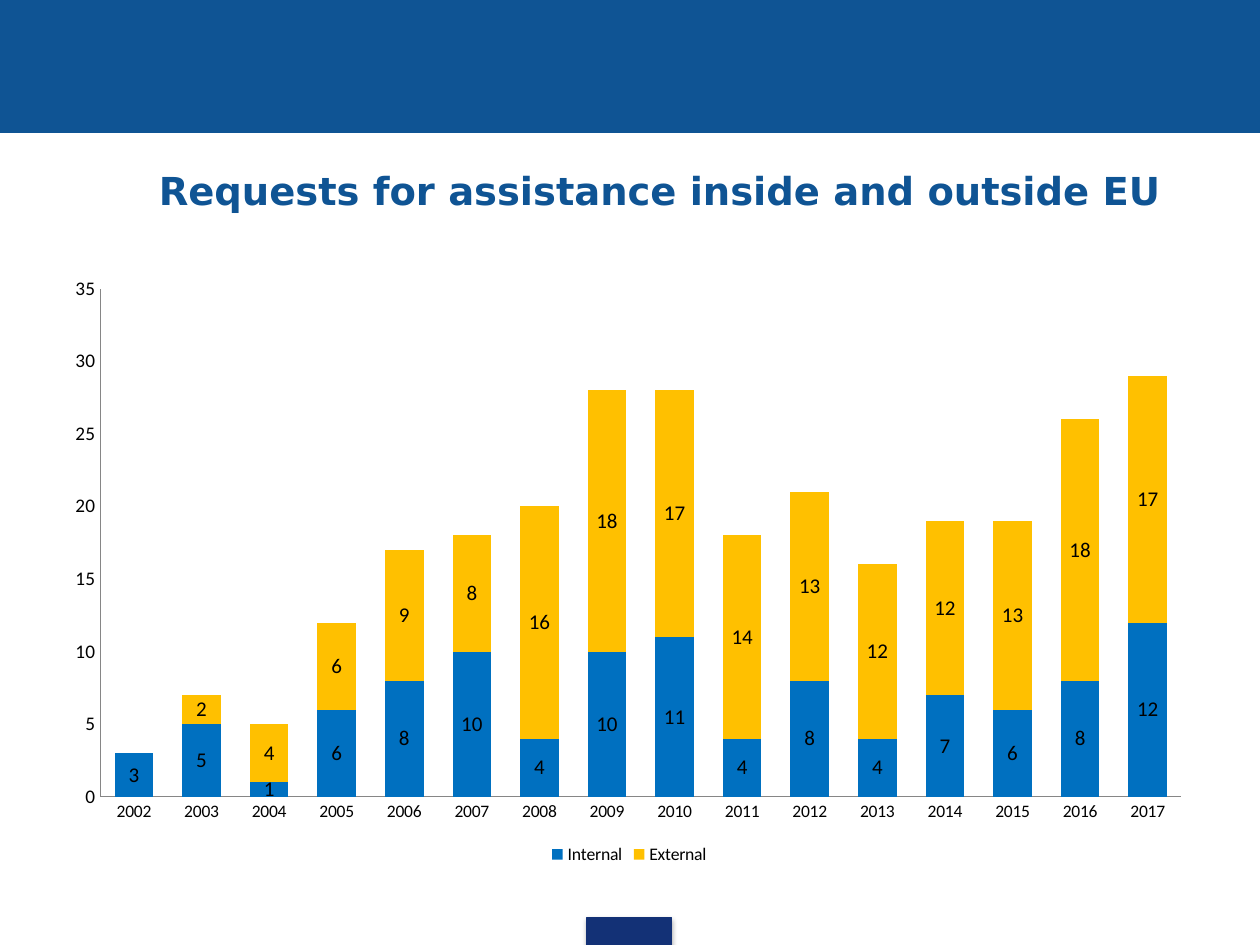
from pptx import Presentation
from pptx.chart.data import CategoryChartData
from pptx.dml.color import RGBColor
from pptx.enum import chart as charts, shapes, text
from pptx.oxml import parse_xml
from pptx.oxml.ns import nsdecls
from pptx.util import Inches, Pt

BLUE = "0F5494"
NAVY = "133176"
YEARS = [str(year) for year in range(2002, 2018)]
SERIES = [
    ("Internal", "0070C0", [3, 5, 1, 6, 8, 10, 4, 10, 11, 4, 8, 4, 7, 6, 8, 12]),
    ("External", "FFC000", [None, 2, 4, 6, 9, 8, 16, 18, 17, 14, 13, 12, 12, 13, 18, 17]),
]


def color(value):
    return RGBColor.from_string(value)


def style_font(font, size, value="000000", name="Calibri", bold=False):
    font.name = name
    font.size = Pt(size)
    font.bold = bold
    font.color.rgb = color(value)


def add_block(page, left, top, width, height, value):
    block = page.shapes.add_shape(
        shapes.MSO_SHAPE.RECTANGLE, Inches(left), Inches(top), Inches(width), Inches(height))
    block.shadow.inherit = False
    block.fill.solid()
    block.fill.fore_color.rgb = color(value)
    block.line.color.rgb = color(value)
    block.line.width = Pt(0.75)
    return block


def add_soft_shadow(block):
    effects = block.element.spPr.find(
        "{http://schemas.openxmlformats.org/drawingml/2006/main}effectLst")
    effects.append(parse_xml(
        f'<a:outerShdw {nsdecls("a")} blurRad="{Pt(3.1)}" dist="{Pt(1.8)}" dir="5400000" '
        'rotWithShape="0"><a:srgbClr val="000000"><a:alpha val="35000"/></a:srgbClr>'
        '</a:outerShdw>'))


def add_title(page, wording):
    box = page.shapes.add_textbox(Inches(0.59), Inches(1.23), Inches(8.9), Inches(0.55))
    frame = box.text_frame
    frame.word_wrap = True
    frame.vertical_anchor = text.MSO_ANCHOR.MIDDLE
    frame.text = wording
    para = frame.paragraphs[0]
    para.alignment = text.PP_ALIGN.CENTER
    properties = para._p.get_or_add_pPr()
    properties.set("marL", str(Inches(0.39)))
    properties.set("indent", "0")
    style_font(para.runs[0].font, 22, BLUE, "DejaVu Sans", True)


def style_axis(axis, size):
    axis.has_major_gridlines = False
    axis.major_tick_mark = charts.XL_TICK_MARK.NONE
    axis.minor_tick_mark = charts.XL_TICK_MARK.NONE
    axis.format.line.color.rgb = color("868686")
    axis.format.line.width = Pt(0.75)
    style_font(axis.tick_labels.font, size)


def place_plot(chart, x, y, w, h):
    """Fix the inner plot area, in fractions of the chart."""
    area = chart._chartSpace.chart.plotArea
    for old in area.findall("{*}layout"):
        area.remove(old)
    sizes = "".join(f'<c:{key} val="{value}"/>' for key, value in zip("xywh", (x, y, w, h)))
    area.insert(0, parse_xml(
        f'<c:layout {nsdecls("c")}><c:manualLayout><c:layoutTarget val="inner"/>'
        f'<c:xMode val="edge"/><c:yMode val="edge"/>{sizes}</c:manualLayout></c:layout>'))


def add_requests_chart(page):
    data = CategoryChartData(number_format="General")
    data.categories = YEARS
    for name, _, values in SERIES:
        data.add_series(name, values)
    chart = page.shapes.add_chart(
        charts.XL_CHART_TYPE.COLUMN_STACKED,
        Inches(0.43), Inches(2.1), Inches(9.13), Inches(4.8), data).chart
    style_font(chart.font, 10)
    chart.has_title = False

    # Axes
    style_axis(chart.category_axis, 10)
    style_axis(chart.value_axis, 11)
    chart.value_axis.minimum_scale = 0
    chart.value_axis.maximum_scale = 35
    chart.value_axis.major_unit = 5

    # Columns and their labels
    plot = chart.plots[0]
    plot.gap_width = 75
    plot.overlap = 100
    plot.vary_by_categories = False
    for series, (_, fill, _) in zip(plot.series, SERIES):
        series.format.fill.solid()
        series.format.fill.fore_color.rgb = color(fill)
        series.data_labels.show_value = True
        style_font(series.data_labels.font, 12)

    # Legend and plot area
    chart.has_legend = True
    chart.legend.position = charts.XL_LEGEND_POSITION.BOTTOM
    chart.legend.include_in_layout = False
    style_font(chart.legend.font, 10.1)
    place_plot(chart, 0.04, 0.04, 0.94, 0.84)


def main():
    deck = Presentation()
    deck.slide_width, deck.slide_height = Inches(10), Inches(7.5)
    page = deck.slides.add_slide(deck.slide_layouts[6])

    # Header band and footer tab
    add_block(page, 0, 0, 10, 1.05, BLUE)
    add_soft_shadow(add_block(page, 4.66, 7.28, 0.67, 0.22, NAVY))

    # Content
    add_title(page, "Requests for assistance inside and outside EU")
    add_requests_chart(page)
    deck.save("out.pptx")


if __name__ == "__main__":
    main()
